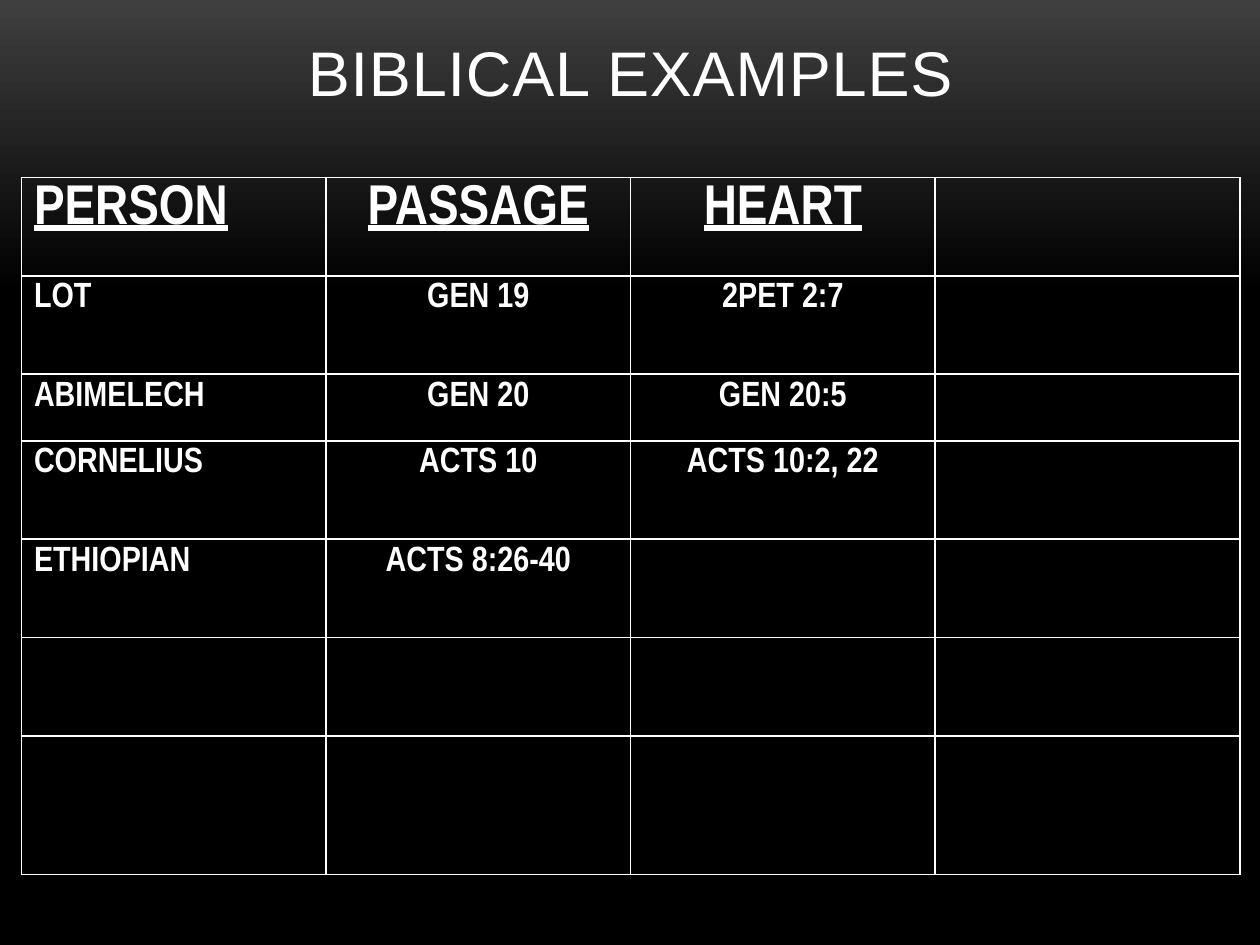
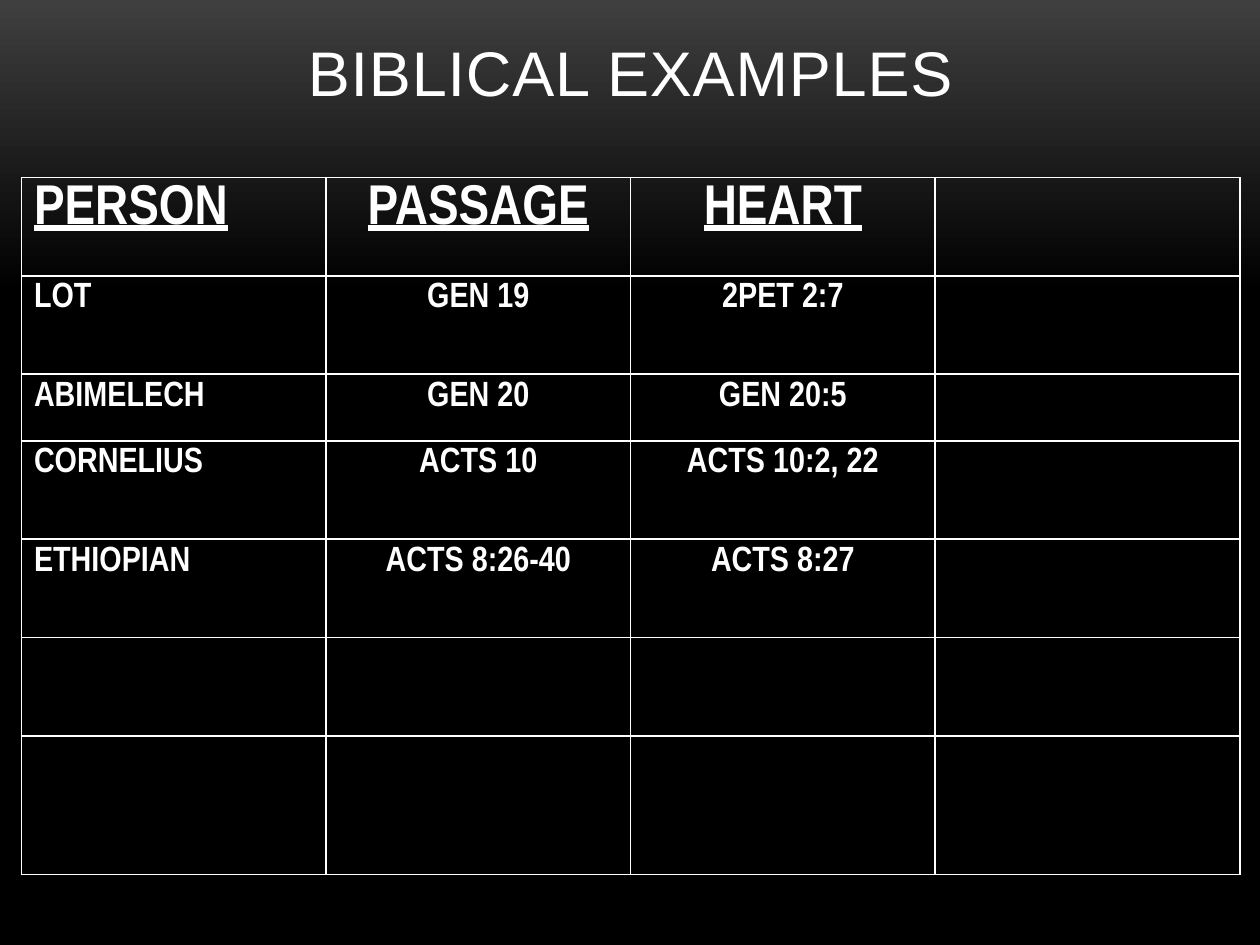
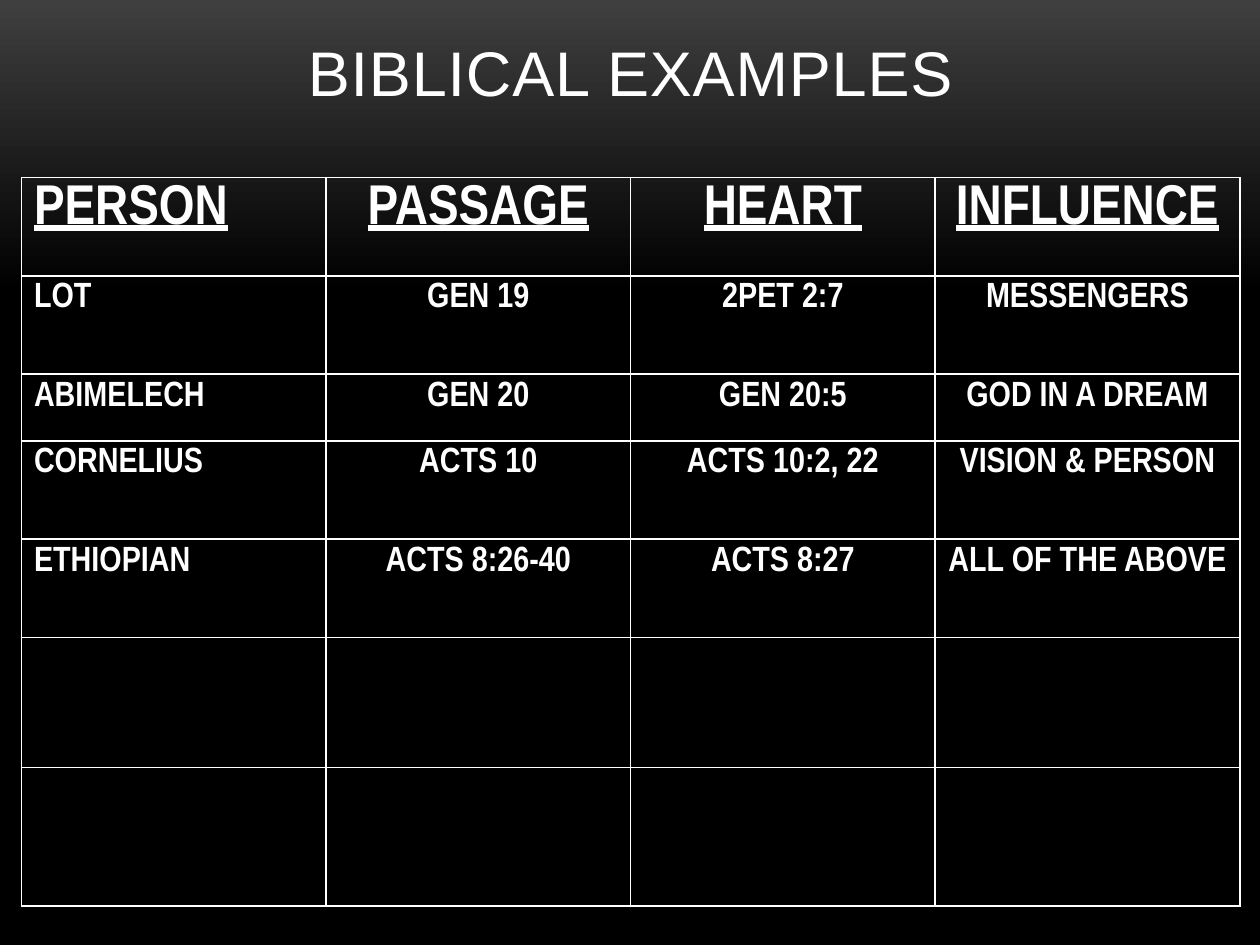
from lxml import etree
from pptx import Presentation
from pptx.dml.color import RGBColor
from pptx.enum.text import MSO_ANCHOR, PP_ALIGN
from pptx.oxml.ns import qn
from pptx.util import Inches, Pt

LEFT, CENTER = PP_ALIGN.LEFT, PP_ALIGN.CENTER
BOTTOM = MSO_ANCHOR.BOTTOM
COLORS = {"text": "FFFFFF", "border": "FFFFFF", "top": "3F3F3F", "base": "000000"}
TITLE_FONT, TABLE_FONT = "Arial", "Arial Narrow"

EXAMPLES = [
    ["PERSON", "PASSAGE", "HEART", "INFLUENCE"],
    ["LOT", "GEN 19", "2PET 2:7", "MESSENGERS"],
    ["ABIMELECH", "GEN 20", "GEN 20:5", "GOD IN A DREAM"],
    ["CORNELIUS", "ACTS 10", "ACTS 10:2, 22", "VISION & PERSON"],
    ["ETHIOPIAN", "ACTS 8:26-40", "ACTS 8:27", "ALL OF THE ABOVE"],
    [""] * 4,
    [""] * 4,
]
ROW_HEIGHTS = [0.78, 0.78, 0.53, 0.78, 0.78, 0.78, 1.1]
TABLE_WIDTH = 9.67

# The table fills in step by step: each slide lists its still empty cells
INFLUENCE_CELLS = {(row, 3) for row in range(len(EXAMPLES))}
ETHIOPIAN_HEART = (4, 2)
STEPS = [
    {"empty": INFLUENCE_CELLS | {ETHIOPIAN_HEART}, "sixth_row": 0.78},
    {"empty": INFLUENCE_CELLS, "sixth_row": 0.78},
    {"empty": set(), "sixth_row": 1.03},
]


def format_paragraph(paragraph, font_name, size, alignment):
    paragraph.alignment = alignment
    paragraph.font.name = font_name
    paragraph.font.size = Pt(size)
    paragraph.font.color.rgb = RGBColor.from_string(COLORS["text"])


def add_borders(cell):
    properties = cell._tc.get_or_add_tcPr()
    for side in ("lnL", "lnR", "lnT", "lnB"):
        line = etree.SubElement(properties, qn(f"a:{side}"), w=str(Pt(1)))
        fill = etree.SubElement(line, qn("a:solidFill"))
        etree.SubElement(fill, qn("a:srgbClr"), val=COLORS["border"])


presentation = Presentation()
presentation.slide_width = Inches(10)
presentation.slide_height = Inches(7.5)

# Shared background: dark grey fading to black
background = presentation.slide_master.background.fill
background.gradient()
background.gradient_angle = 270
for stop, position, name in zip(background.gradient_stops, (0, 0.31), ("top", "base")):
    stop.position = position
    stop.color.rgb = RGBColor.from_string(COLORS[name])

for step in STEPS:
    slide = presentation.slides.add_slide(presentation.slide_layouts[5])

    # Title
    title = slide.shapes.title
    title.left, title.top = Inches(0.67), Inches(0)
    title.width, title.height = Inches(8.67), Inches(0.92)
    title.text_frame.text = "BIBLICAL EXAMPLES"
    title.text_frame.vertical_anchor = BOTTOM
    paragraph = title.text_frame.paragraphs[0]
    format_paragraph(paragraph, TITLE_FONT, 36, CENTER)
    paragraph.runs[0]._r.get_or_add_rPr().set("spc", "50")

    # Table frame
    heights = list(ROW_HEIGHTS)
    heights[5] = step["sixth_row"]
    table = slide.shapes.add_table(
        len(EXAMPLES), len(EXAMPLES[0]), Inches(0.17), Inches(1.41),
        Inches(TABLE_WIDTH), Inches(sum(heights))).table
    table.first_row = False
    table.horz_banding = False
    for row, height in zip(table.rows, heights):
        row.height = Inches(height)

    # Table cells
    for row_index, texts in enumerate(EXAMPLES):
        for column_index, text in enumerate(texts):
            cell = table.cell(row_index, column_index)
            add_borders(cell)
            cell.fill.background()
            if not text or (row_index, column_index) in step["empty"]:
                continue
            cell.text = text
            is_header = row_index == 0
            paragraph = cell.text_frame.paragraphs[0]
            format_paragraph(paragraph, TABLE_FONT, 32 if is_header else 20,
                             LEFT if column_index == 0 else CENTER)
            paragraph.font.bold = True
            paragraph.font.underline = is_header

presentation.save("out.pptx")
